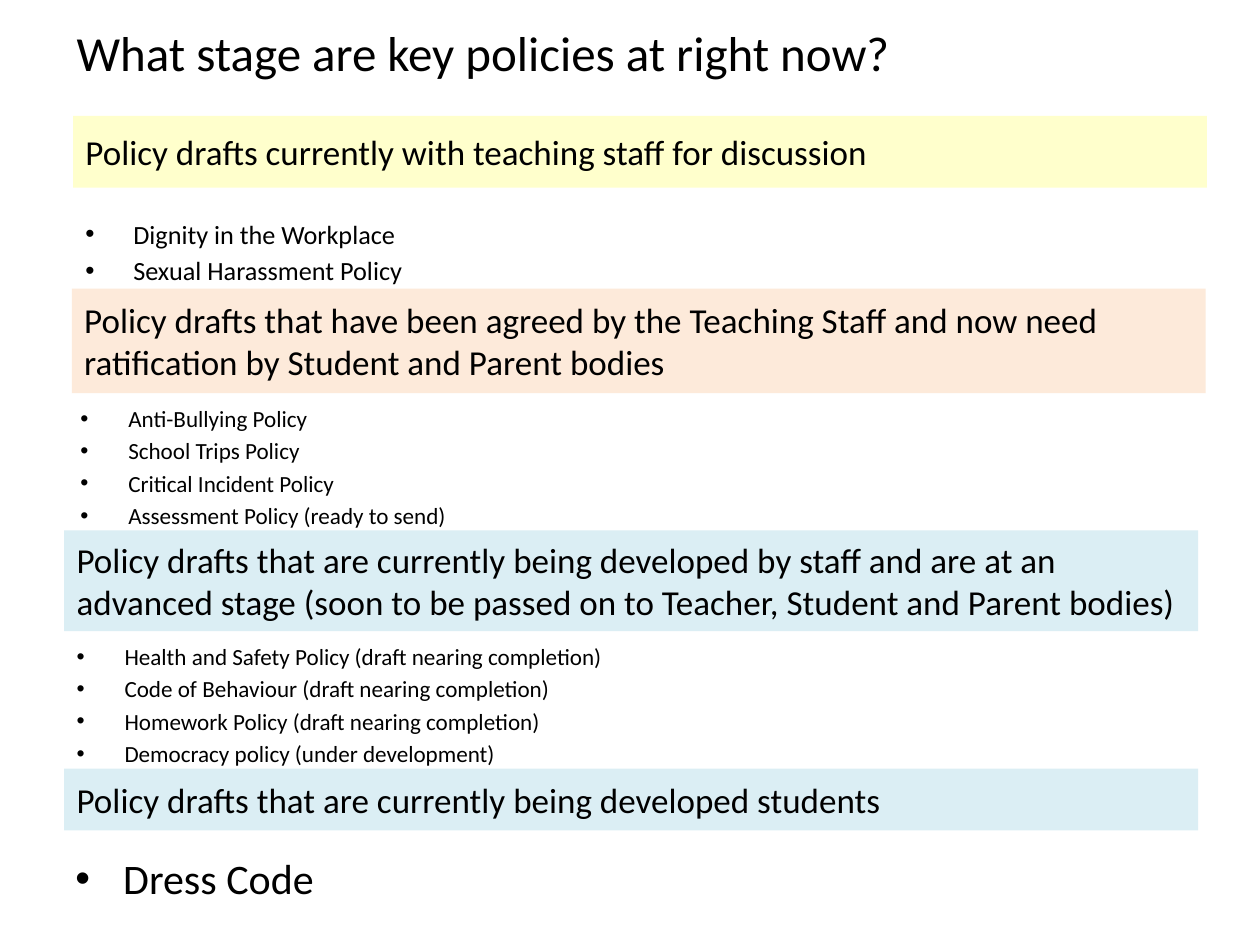
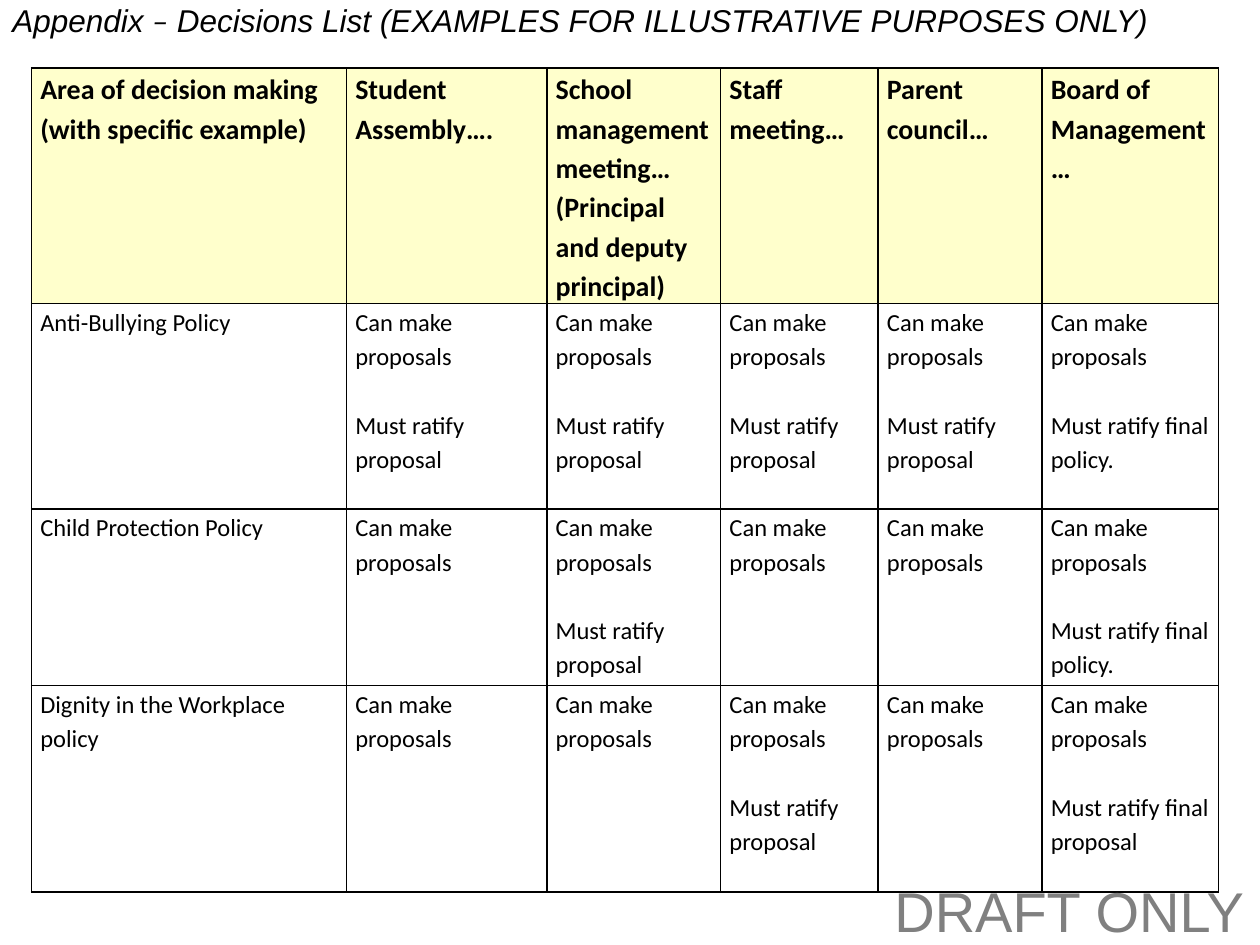
import pptx
import pptx.dml.color
import pptx.enum.shapes
import pptx.enum.text
import pptx.oxml.ns
import pptx.util
from lxml import etree

BLACK = pptx.dml.color.RGBColor(0x00, 0x00, 0x00)
WHITE = pptx.dml.color.RGBColor(0xFF, 0xFF, 0xFF)
GREY = pptx.dml.color.RGBColor(0x80, 0x80, 0x80)
YELLOW = pptx.dml.color.RGBColor(0xFF, 0xFF, 0xCC)
PEACH = pptx.dml.color.RGBColor(0xFD, 0xEA, 0xDA)
BLUE = pptx.dml.color.RGBColor(0xDB, 0xEE, 0xF4)

PROPOSE = "Can make proposals"
RATIFY = PROPOSE + "\nMust ratify proposal"
RATIFY_POLICY = PROPOSE + "\nMust ratify final policy."
RATIFY_FINAL = PROPOSE + "\nMust ratify final proposal"


def px(n):
    return pptx.util.Emu(n * 9144)


def sub(parent, tag, **attrs):
    return etree.SubElement(parent, pptx.oxml.ns.qn(tag), attrs)


class Deck:
    body_font = "Calibri"
    label_font = "Arial"
    indent = 38

    def __init__(self):
        self.prs = pptx.Presentation()
        self.prs.slide_width = px(1000)
        self.prs.slide_height = px(750)

    def new_slide(self):
        self.s = self.prs.slides.add_slide(self.prs.slide_layouts[6])

    def style(self, p, size, font=None, color=BLACK, bold=False, italic=False):
        for r in p.runs:
            r.font.size = pptx.util.Pt(size)
            r.font.name = font or self.body_font
            r.font.color.rgb = color
            r.font.bold = bold
            r.font.italic = italic

    def text(self, x, y, w, h, text, size, **look):
        tf = self.s.shapes.add_textbox(px(x), px(y), px(w), px(h)).text_frame
        tf.word_wrap = True
        tf.text = text
        for p in tf.paragraphs:
            self.style(p, size, **look)
        return tf

    def band(self, x, y, h, text, fill):
        sp = self.s.shapes.add_shape(
            pptx.enum.shapes.MSO_SHAPE.RECTANGLE, px(x), px(y), px(900), px(h))
        sp.shadow.inherit = False
        sp.fill.solid()
        sp.fill.fore_color.rgb = fill
        sp.line.fill.background()
        tf = sp.text_frame
        tf.word_wrap = True
        tf.vertical_anchor = pptx.enum.text.MSO_ANCHOR.MIDDLE
        tf.text = text
        p = tf.paragraphs[0]
        p.alignment = pptx.enum.text.PP_ALIGN.LEFT
        self.style(p, 20)

    def bullets(self, x, y, w, h, items, size):
        tf = self.text(x, y, w, h, "\n".join(items), size)
        for p in tf.paragraphs:
            p.space_before = pptx.util.Pt(size * 0.2)
            pPr = p._p.get_or_add_pPr()
            pPr.set("marL", str(px(self.indent)))
            pPr.set("indent", str(px(-self.indent)))
            sub(pPr, "a:buFont", typeface="Arial")
            sub(pPr, "a:buChar", char="•")

    def cell(self, cell, text, size, fill, bold):
        cell.margin_left = cell.margin_right = px(7)
        cell.margin_top = cell.margin_bottom = 0
        tcPr = cell._tc.get_or_add_tcPr()
        for side in ("a:lnL", "a:lnR", "a:lnT", "a:lnB"):
            ln = sub(tcPr, side, w=str(pptx.util.Pt(1)))
            sub(sub(ln, "a:solidFill"), "a:srgbClr", val=str(BLACK))
        cell.fill.solid()
        cell.fill.fore_color.rgb = fill
        cell.text_frame.text = text
        for i, p in enumerate(cell.text_frame.paragraphs):
            p.line_spacing = 1.15
            if i:
                p.space_before = pptx.util.Pt(19.6)
            self.style(p, size, bold=bold)

    def table(self, x, y, widths, heights, rows):
        tbl = self.s.shapes.add_table(
            len(heights), len(widths), px(x), px(y),
            px(sum(widths)), px(sum(heights))).table
        tbl.first_row = tbl.horz_banding = False
        for column, w in zip(tbl.columns, widths):
            column.width = px(w)
        for i, (row, h) in enumerate(zip(tbl.rows, heights)):
            row.height = px(h)
            size, fill = (14, WHITE) if i else (16, YELLOW)
            for cell, text in zip(row.cells, rows[i]):
                self.cell(cell, text, size, fill, bold=i == 0)


def policy_stages(deck):
    deck.new_slide()
    deck.text(51, 13, 907, 57, "What stage are key policies at right now?", 28)
    deck.band(58, 92, 57, "Policy drafts currently with teaching staff for discussion", YELLOW)
    deck.bullets(58, 168, 900, 57, ["Dignity in the Workplace", "Sexual Harassment Policy"], 15)
    deck.band(57, 229, 83, "Policy drafts that have been agreed by the Teaching Staff and now need "
              "ratification by Student and Parent bodies", PEACH)
    deck.bullets(54, 316, 900, 104, [
        "Anti-Bullying Policy",
        "School Trips Policy",
        "Critical Incident Policy",
        "Assessment Policy (ready to send)"], 13.2)
    deck.band(51, 421, 80, "Policy drafts that are currently being developed by staff and are at an "
              "advanced stage (soon to be passed on to Teacher, Student and Parent bodies)", BLUE)
    deck.bullets(51, 505, 449, 100, [
        "Health and Safety Policy (draft nearing completion)",
        "Code of Behaviour (draft nearing completion)",
        "Homework Policy (draft nearing completion)",
        "Democracy policy (under development)"], 13.2)
    deck.band(51, 610, 49, "Policy drafts that are currently being developed students", BLUE)
    deck.bullets(50, 672, 900, 53, ["Dress Code"], 24)


def decisions_list(deck):
    deck.new_slide()
    deck.table(25, 54, [250, 159, 138, 125, 130, 140], [187, 163, 140, 164], [
        ["Area of decision making (with specific example)", "Student Assembly….",
         "School management meeting… (Principal and deputy principal)",
         "Staff meeting…", "Parent council…", "Board of Management…"],
        ["Anti-Bullying Policy", RATIFY, RATIFY, RATIFY, RATIFY, RATIFY_POLICY],
        ["Child Protection Policy", PROPOSE, RATIFY, PROPOSE, PROPOSE, RATIFY_POLICY],
        ["Dignity in the Workplace policy", PROPOSE, PROPOSE, RATIFY, PROPOSE, RATIFY_FINAL],
    ])
    tf = deck.text(0, -4, 1000, 57, "Appendix ", 18)
    p = tf.paragraphs[0]
    for part in ("–", " Decisions List (EXAMPLES FOR ILLUSTRATIVE PURPOSES ONLY)"):
        p.add_run().text = part
    deck.style(p, 18, font=deck.label_font, italic=True)
    p.runs[1].font.name = deck.body_font
    deck.text(700, 691, 300, 64, "DRAFT ONLY", 32, font=deck.label_font, color=GREY)


def main():
    deck = Deck()
    policy_stages(deck)
    decisions_list(deck)
    deck.prs.save("out.pptx")


if __name__ == "__main__":
    main()
